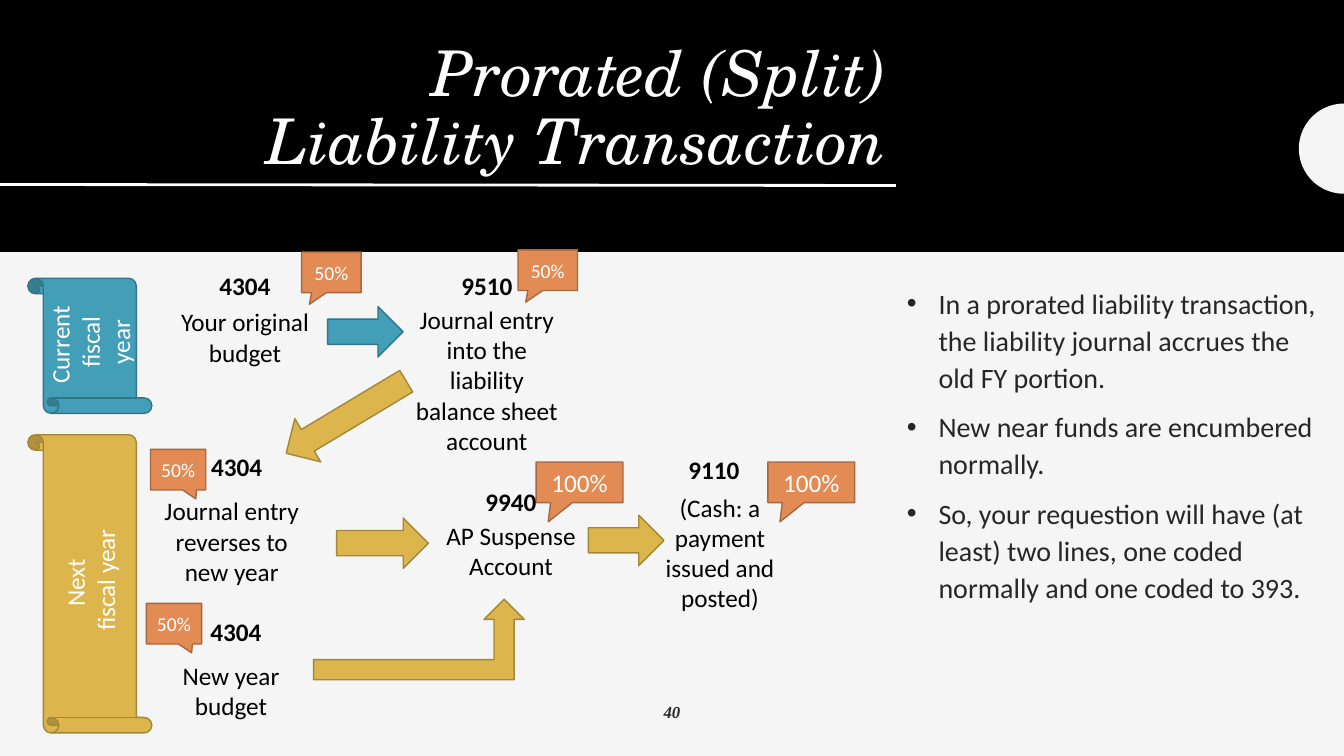
from collections import namedtuple
from math import cos, pi, sin

from lxml.etree import SubElement
from pptx import Presentation
from pptx.dml.color import RGBColor as RGB
from pptx.enum.shapes import MSO_CONNECTOR as Conn, MSO_SHAPE as Kind
from pptx.enum.text import MSO_ANCHOR as Anchor, PP_ALIGN as Align
from pptx.oxml.ns import qn
from pptx.util import Pt

Box = namedtuple("Box", "x y w h")
Ink = namedtuple("Ink", "fill line")


class Theme:
    page, band, white, text, black = "F5F5F5", "000000", "FFFFFF", "262626", "000000"
    old = Ink("439EB7", "327587")
    new = Ink("DCB64D", "A38739")
    share = Ink("E28B55", "A7673F")
    serif, sans, roman = "TeX Gyre Schola", "Calibri", "Times New Roman"
    title, body, step, small, foot = 45, 20, 18, 14, 12


def tint(shape, fill, line=None):
    shape.shadow.inherit = False
    shape.fill.solid()
    shape.fill.fore_color.rgb = RGB.from_string(fill)
    if line:
        shape.line.color.rgb = RGB.from_string(line)
        shape.line.width = Pt(1)
    else:
        shape.line.fill.background()


def add(slide, kind, box, ink, turn=0, adj=()):
    shape = slide.shapes.add_shape(kind, *map(Pt, box))
    tint(shape, *ink)
    shape.rotation = turn
    for i, value in enumerate(adj):
        shape.adjustments[i] = value
    return shape


def write(para, text, size, color, font=Theme.sans, bold=False, slant=False):
    run = para.add_run()
    run.text = text
    run.font.size, run.font.name = Pt(size), font
    run.font.bold, run.font.italic = bold, slant
    run.font.color.rgb = RGB.from_string(color)


def frame(slide, box, anchor=Anchor.TOP):
    text = slide.shapes.add_textbox(*map(Pt, box)).text_frame
    text.word_wrap = True
    text.vertical_anchor = anchor
    return text


def label(shape, lines, size):
    text = shape.text_frame
    text.word_wrap = True
    text.vertical_anchor = Anchor.MIDDLE
    for i, line in enumerate(lines):
        para = text.add_paragraph() if i else text.paragraphs[0]
        para.alignment = Align.CENTER
        write(para, line, size, Theme.white)


def header(slide, box):
    add(slide, Kind.RECTANGLE, box, Ink(Theme.band, None))
    # Title
    text = frame(slide, Box(box.x + 75.6, box.y + 33.8, 564.5, 97.2), Anchor.BOTTOM)
    para = text.paragraphs[0]
    para.alignment, para.line_spacing = Align.RIGHT, 0.9
    look = Theme.title, Theme.white, Theme.serif, False, True
    write(para, "Prorated (Split)", *look)
    para.add_line_break()
    write(para, "Liability Transaction", *look)
    # Rule under the title
    rule = slide.shapes.add_connector(
        Conn.STRAIGHT, Pt(box.x), Pt(box.y + 131.8), Pt(box.x + 640), Pt(box.y + 132.5))
    rule.line.color.rgb = RGB.from_string(Theme.white)
    rule.line.width = Pt(2)
    SubElement(rule._element.spPr, qn("a:effectLst"))
    # Half disc at the right edge
    right, mid, rad, steps = box.x + box.w, box.y + 106.2, 32.2, 40
    arc = [(Pt(right - rad * sin(pi * i / steps)), Pt(mid - rad * cos(pi * i / steps)))
           for i in range(steps + 1)]
    draft = slide.shapes.build_freeform(*arc[0])
    draft.add_line_segments(arc[1:], close=True)
    tint(draft.convert_to_shape(), Theme.page)


def flow(slide, box):
    def place(x, y, w, h):
        return Box(box.x + x, box.y + y, w, h)

    # Share callouts, with the tail to the left or right
    left, right, wide = (-0.37, 0.788), (0.32, 0.718), (-0.361, 0.975)
    for share, x, y, w, size, tail in (
            ("50%", 215.5, 0, 42.5, Theme.small, left),
            ("50%", 370, -1.5, 42.5, Theme.small, left),
            ("50%", 107.5, 141, 39.5, Theme.small, right),
            ("50%", 104.5, 251, 39.5, Theme.small, right),
            ("100%", 383, 150, 62, Theme.step, wide),
            ("100%", 548.5, 150, 62, Theme.step, wide)):
        shape = add(slide, Kind.RECTANGULAR_CALLOUT, place(x, y, w, 29), Theme.share, adj=tail)
        label(shape, [share], size)

    # Fiscal year scrolls, turned upright around their centres
    for year, mid, span, ink in (("Current ", 67, 96.5, Theme.old),
                                 ("Next ", 237, 213, Theme.new)):
        spot = place(64.2 - span / 2, mid - 44.3, span, 88.6)
        shape = add(slide, Kind.HORIZONTAL_SCROLL, spot, ink, 270)
        label(shape, [year, "fiscal year"], Theme.step)

    # Arrows
    for x, y, w, turn, ink in ((234, 39, 54, 0, Theme.old),
                               (197.3, 100, 100, 149, Theme.new),
                               (240.5, 190, 65.5, 0, Theme.new),
                               (420.3, 188, 54, 0, Theme.new)):
        add(slide, Kind.RIGHT_ARROW, place(x, y, w, 36), ink, turn)
    add(slide, Kind.BENT_UP_ARROW, place(224, 248, 150.5, 57.6), Theme.new)

    # Account codes: left, top, width; then the same for the wording below
    for code, head, words, body in (
            ("4304", (116, 9.5, 118), "Your original budget", (116, 35.5, 118)),
            ("9510", (288.7, 9.5, 118),
             "Journal entry into the liability balance sheet account", (288.7, 33.8, 118)),
            ("4304", (110, 139, 118), "Journal entry reverses to new year", (106.5, 170.6, 118)),
            ("9940", (306, 164, 118), "AP Suspense Account", (306, 188, 118)),
            ("4304", (109.5, 256.5, 118), "New year budget", (106, 288, 118)),
            ("9110", (456, 141, 108), "(Cash: a payment issued and posted)",
             (465, 167.8, 98.6))):
        for text, spot, bold in ((code, head, True), (words, body, False)):
            para = frame(slide, place(*spot, 29)).paragraphs[0]
            para.alignment = Align.CENTER
            write(para, text, Theme.step, Theme.black, bold=bold)


def notes(slide, box, points):
    text = frame(slide, box)
    for i, point in enumerate(points):
        para = text.add_paragraph() if i else text.paragraphs[0]
        para.line_spacing = 1.1
        para.space_before = Pt(9 if i else 0)
        props = para._p.get_or_add_pPr()
        props.set("marL", str(Pt(22.5)))
        props.set("indent", str(-Pt(22.5)))
        SubElement(props, qn("a:buFont"), typeface="Arial")
        SubElement(props, qn("a:buChar"), char="•")
        write(para, point, Theme.body, Theme.text)


def footer(slide, box, number):
    para = frame(slide, box).paragraphs[0]
    para.alignment = Align.CENTER
    write(para, number, Theme.foot, Theme.text, Theme.roman, True, True)


def main():
    deck = Presentation()
    deck.slide_width, deck.slide_height = Pt(960), Pt(540)
    slide = deck.slides.add_slide(deck.slide_layouts[6])
    slide.background.fill.solid()
    slide.background.fill.fore_color.rgb = RGB.from_string(Theme.page)
    header(slide, Box(0, 0, 960, 180))
    flow(slide, Box(0, 180, 640, 360))
    notes(slide, Box(640.8, 198.7, 314.6, 278.6), (
        "In a prorated liability transaction, the liability journal accrues the old FY portion.",
        "New near funds are encumbered normally.",
        "So, your requestion will have (at least) two lines, one coded normally "
        "and one coded to 393."))
    footer(slide, Box(0, 497.5, 960, 29), "40")
    deck.save("out.pptx")


if __name__ == "__main__":
    main()
